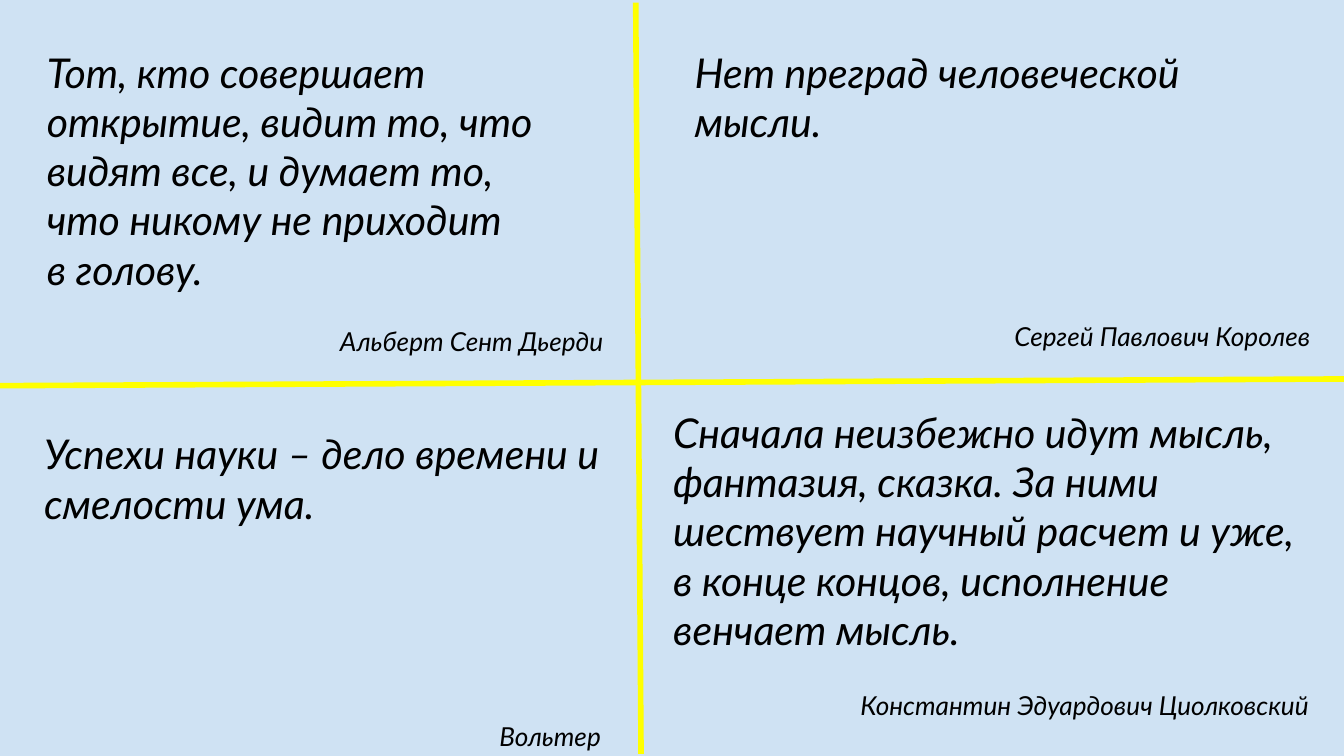
from lxml.etree import SubElement
from pptx import Presentation
from pptx.dml.color import RGBColor
from pptx.enum.shapes import MSO_CONNECTOR
from pptx.enum.text import MSO_AUTO_SIZE, PP_ALIGN
from pptx.oxml.ns import qn
from pptx.util import Inches, Pt

WIDTH = 10
HEIGHT = WIDTH * 9 / 16
FONT = "Lato"
SKY, YELLOW, BLACK = "CFE2F3", "FFFF00", "000000"

# Left, top, width, height; quote paragraphs; author; gap above the author in points
QUOTES = [
    ((0.25, 0.25, 4.34, 2.52),
     ["Тот, кто совершает открытие, видит то, что видят все, и думает то,",
      "что никому не приходит",
      "в голову."],
     "Альберт Сент Дьерди", 17),
    ((5.07, 0.25, 4.78, 2.49),
     ["Нет преград человеческой мысли."],
     "Сергей Павлович Королев", 93.6),
    ((4.91, 2.93, 4.93, 2.59),
     ["Сначала неизбежно идут мысль, фантазия, сказка. За ними шествует "
      "научный расчет и уже, в конце концов, исполнение венчает мысль."],
     "Константин Эдуардович Циолковский", 19.2),
    ((0.23, 3.09, 4.34, 2.46),
     ["Успехи науки – дело времени и смелости ума."],
     "Вольтер", 103.2),
]


def color(value):
    return RGBColor.from_string(value)


def add_divider(page, start, end):
    """Draw a yellow line between two points given in inches."""
    line = page.shapes.add_connector(MSO_CONNECTOR.STRAIGHT,
                                     *map(Inches, start + end))
    line.line.color.rgb = color(YELLOW)
    line.line.width = Pt(3)
    SubElement(line._element.spPr, qn("a:effectLst"))


def write_para(para, text, size=22, align=PP_ALIGN.LEFT, gap=0):
    para.alignment = align
    para.space_before = Pt(gap)
    span = para.add_run()
    span.text = text
    span.font.name = FONT
    span.font.size = Pt(size)
    span.font.italic = True
    span.font.color.rgb = color(BLACK)


def add_quote(page, place, lines, author, gap):
    """Place a quote with its author set to the right below it."""
    frame = page.shapes.add_textbox(*map(Inches, place)).text_frame
    frame.word_wrap = True
    frame.auto_size = MSO_AUTO_SIZE.SHAPE_TO_FIT_TEXT
    frame.margin_left = frame.margin_right = Inches(0.1)
    frame.margin_top = frame.margin_bottom = Inches(0.1)
    write_para(frame.paragraphs[0], lines[0])
    for line in lines[1:]:
        write_para(frame.add_paragraph(), line)
    write_para(frame.add_paragraph(), author, size=14,
               align=PP_ALIGN.RIGHT, gap=gap)


def main():
    deck = Presentation()
    deck.slide_width, deck.slide_height = Inches(WIDTH), Inches(HEIGHT)
    page = deck.slides.add_slide(deck.slide_layouts[6])

    # Background
    page.background.fill.solid()
    page.background.fill.fore_color.rgb = color(SKY)

    # Slightly tilted cross that parts the four quotes
    add_divider(page, (0, 2.87), (WIDTH, 2.82))
    add_divider(page, (4.73, 0.02), (4.77, 5.61))

    # Quotes
    for quote in QUOTES:
        add_quote(page, *quote)

    deck.save("out.pptx")


if __name__ == "__main__":
    main()
